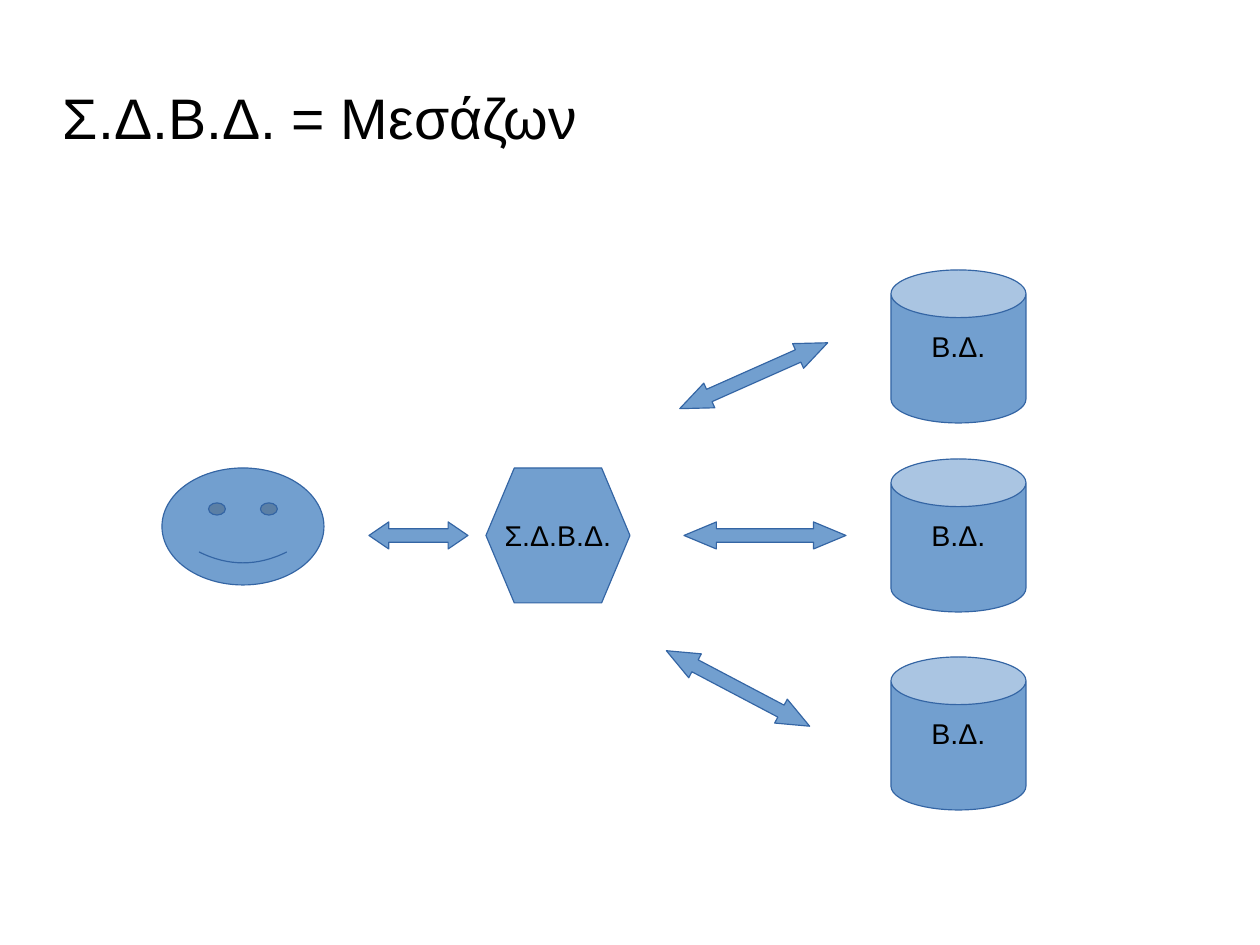
from pptx import Presentation
from pptx import util as u
from pptx.dml.color import RGBColor
from pptx.enum import shapes, text

FILL = "729FCF"
OUTLINE = "3465A4"
INK = "000000"
CAP_HEIGHT = 1.06


def colour(hex_string):
    return RGBColor.from_string(hex_string)


def write(box, words, size, alignment):
    frame = box.text_frame
    frame.auto_size = text.MSO_AUTO_SIZE.NONE
    frame.vertical_anchor = text.MSO_ANCHOR.MIDDLE
    para = frame.paragraphs[0]
    para.alignment = alignment
    span = para.add_run()
    span.text = words
    span.font.size = u.Pt(size)
    span.font.name = "Arial"
    span.font.color.rgb = colour(INK)
    return frame


def add_title(page, words):
    title = page.shapes.title
    title.left, title.top = u.Cm(1.4), u.Cm(1.6)
    title.width, title.height = u.Cm(20), u.Cm(2)
    frame = write(title, words, 36, text.PP_ALIGN.LEFT)
    frame.margin_left = frame.margin_right = 0
    frame.margin_top = frame.margin_bottom = 0


def add_figure(page, kind, left, top, width, height):
    figure = page.shapes.add_shape(
        kind, u.Cm(left), u.Cm(top), u.Cm(width), u.Cm(height))
    figure.shadow.inherit = False
    figure.fill.solid()
    figure.fill.fore_color.rgb = colour(FILL)
    figure.line.color.rgb = colour(OUTLINE)
    figure.line.width = u.Pt(0)
    return figure


def add_label(figure, words):
    frame = write(figure, words, 18, text.PP_ALIGN.CENTER)
    frame.word_wrap = False
    return frame


def add_database(page, top):
    width = 3
    can = add_figure(page, shapes.MSO_SHAPE.CAN, 19.8, top, width, 3.4)
    can.adjustments[0] = CAP_HEIGHT / width
    frame = add_label(can, "Β.Δ.")
    # Lifts the label from the middle of the can's front to its full middle
    frame.margin_bottom = u.Cm(0.13 + CAP_HEIGHT / 2)


def add_arrow(page, left, top, width, rotation=0):
    height = 0.6
    arrow = add_figure(page, shapes.MSO_SHAPE.LEFT_RIGHT_ARROW,
                       left, top, width, height)
    arrow.adjustments[0] = 0.5
    arrow.adjustments[1] = 0.2 * width / height
    arrow.rotation = rotation


def main():
    deck = Presentation()
    deck.slide_width, deck.slide_height = u.Cm(28), u.Cm(21)
    page = deck.slides.add_slide(deck.slide_layouts[5])
    add_title(page, "Σ.Δ.Β.Δ. = Μεσάζων")

    add_figure(page, shapes.MSO_SHAPE.SMILEY_FACE, 3.6, 10.4, 3.6, 2.6)
    manager = add_figure(page, shapes.MSO_SHAPE.HEXAGON, 10.8, 10.4, 3.2, 3)
    manager.adjustments[0] = 0.21
    add_label(manager, "Σ.Δ.Β.Δ.")

    for top in (6, 10.2, 14.6):
        add_database(page, top)

    add_arrow(page, 8.2, 11.6, 2.2)
    add_arrow(page, 14.95, 8.05, 3.6, 336)
    add_arrow(page, 15.2, 11.6, 3.6)
    add_arrow(page, 14.6, 15, 3.6, 27.8)

    deck.save("out.pptx")


if __name__ == "__main__":
    main()
